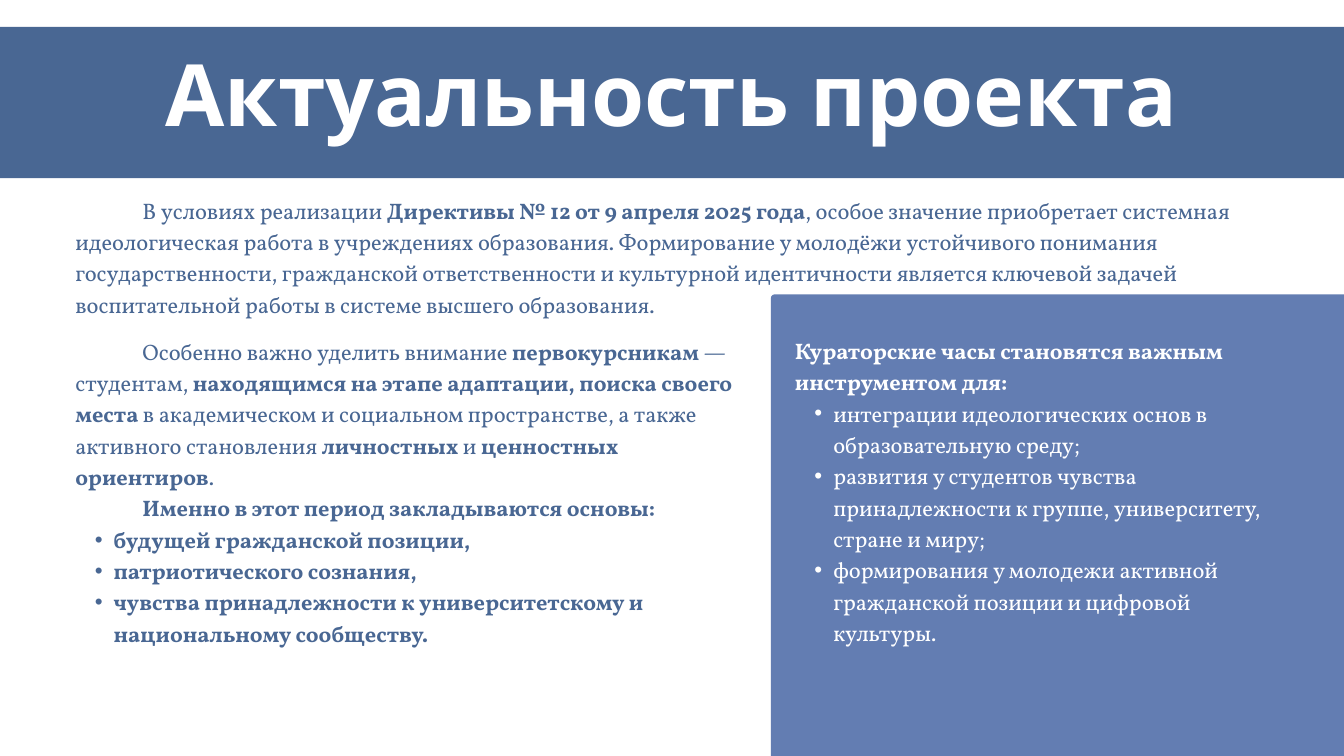
from lxml.etree import SubElement
from pptx import Presentation
from pptx.dml.color import RGBColor
from pptx.enum.shapes import MSO_SHAPE
from pptx.enum.text import PP_ALIGN
from pptx.oxml.ns import qn
from pptx.util import Inches, Pt

NAVY = RGBColor(0x49, 0x67, 0x93)
PERIWINKLE = RGBColor(0x63, 0x7D, 0xB2)
WHITE = RGBColor(0xFF, 0xFF, 0xFF)

CONTEXT = (
    "В условиях реализации **Директивы № 12 от 9 апреля 2025 года**, особое значение "
    "приобретает системная идеологическая работа в учреждениях образования. "
    "Формирование у молодёжи устойчивого понимания государственности, гражданской "
    "ответственности и культурной идентичности является ключевой задачей "
    "воспитательной работы в системе высшего образования."
)
FRESHMEN = (
    "Особенно важно уделить внимание **первокурсникам **— студентам, **находящимся на "
    "этапе адаптации, поиска своего места** в академическом и социальном пространстве, "
    "а также активного становления **личностных **и **ценностных ориентиров**."
)
FOUNDATIONS = [
    "**будущей гражданской позиции,**",
    "**патриотического сознания,**",
    "**чувства принадлежности к университетскому и национальному сообществу.**",
]
PURPOSES = [
    "интеграции идеологических основ в образовательную среду;",
    "развития у студентов чувства принадлежности к группе, университету, стране и миру;",
    "формирования у молодежи активной гражданской позиции и цифровой культуры.",
]


def add_panel(slide, left, top, width, height, color, radius):
    """Draw a filled panel with slightly rounded corners."""
    panel = slide.shapes.add_shape(
        MSO_SHAPE.ROUNDED_RECTANGLE,
        Inches(left), Inches(top), Inches(width), Inches(height),
    )
    panel.adjustments[0] = radius / min(width, height)
    panel.shadow.inherit = False
    panel.fill.solid()
    panel.fill.fore_color.rgb = color
    panel.line.fill.background()


def add_frame(slide, left, top, width, height):
    """Add a wrapping text box without margins and return its text frame."""
    box = slide.shapes.add_textbox(
        Inches(left), Inches(top), Inches(width), Inches(height)
    )
    frame = box.text_frame
    frame.word_wrap = True
    frame.margin_left = frame.margin_right = 0
    frame.margin_top = frame.margin_bottom = 0
    return frame


def add_para(frame, text, color=NAVY, font="Vollkorn", size=24, spacing=33.6,
             align=PP_ALIGN.LEFT, first_line=0, bullet=False):
    """Write one paragraph; text between double asterisks is bold."""
    para = frame.paragraphs[0]
    if para.runs:
        para = frame.add_paragraph()
    properties = para._p.get_or_add_pPr()
    if bullet:
        para.level = 1
        properties.set("marL", str(Inches(0.57)))
        properties.set("indent", str(Inches(-0.28)))
        SubElement(properties, qn("a:buFont"), typeface="Arial")
        SubElement(properties, qn("a:buChar"), char="•")
    elif first_line:
        properties.set("marL", "0")
        properties.set("indent", str(Inches(first_line)))
    para.alignment = align
    para.line_spacing = Pt(spacing)
    for index, part in enumerate(text.split("**")):
        if part:
            span = para.add_run()
            span.text = part
            span.font.name = font
            span.font.size = Pt(size)
            span.font.bold = index % 2 == 1
            span.font.color.rgb = color


def add_header(slide, left, top, width, height):
    """Draw the title band across the slide."""
    add_panel(slide, left, top, width, height, NAVY, 0.05)
    frame = add_frame(slide, left + 1.31, top + 0.42, width - 2.63, 1.35)
    add_para(frame, "**Актуальность проекта**", color=WHITE, font="Karla",
             size=92, spacing=94.8, align=PP_ALIGN.CENTER)


def add_context(slide, left, top, width, height):
    """Write the introductory paragraph."""
    add_para(add_frame(slide, left, top, width, height), CONTEXT, first_line=1)


def add_freshmen(slide, left, top, width, height):
    """Write the left column about first-year students."""
    frame = add_frame(slide, left, top, width, height)
    add_para(frame, FRESHMEN, first_line=1)
    add_para(frame, "**Именно в этот период закладываются основы:**", first_line=1)
    for item in FOUNDATIONS:
        add_para(frame, item, bullet=True)


def add_purposes(slide, left, top, width, height):
    """Draw the right panel with the purposes of curator hours."""
    add_panel(slide, left, top, width, height, PERIWINKLE, 0.06)
    frame = add_frame(slide, left + 0.36, top + 0.57, 7.47, 5.47)
    add_para(frame, "**Кураторские часы становятся важным инструментом для:**",
             color=WHITE)
    for item in PURPOSES:
        add_para(frame, item, color=WHITE, bullet=True)


def main():
    """Build the slide and save the deck."""
    deck = Presentation()
    deck.slide_width = Inches(20)
    deck.slide_height = Inches(11.25)
    slide = deck.slides.add_slide(deck.slide_layouts[6])
    add_header(slide, -0.19, 0.4, 20.38, 2.25)
    add_context(slide, 1.12, 2.86, 18.88, 1.87)
    add_freshmen(slide, 1.12, 4.96, 10.12, 5.21)
    add_purposes(slide, 11.47, 4.38, 10.12, 7.06)
    deck.save("out.pptx")


if __name__ == "__main__":
    main()
